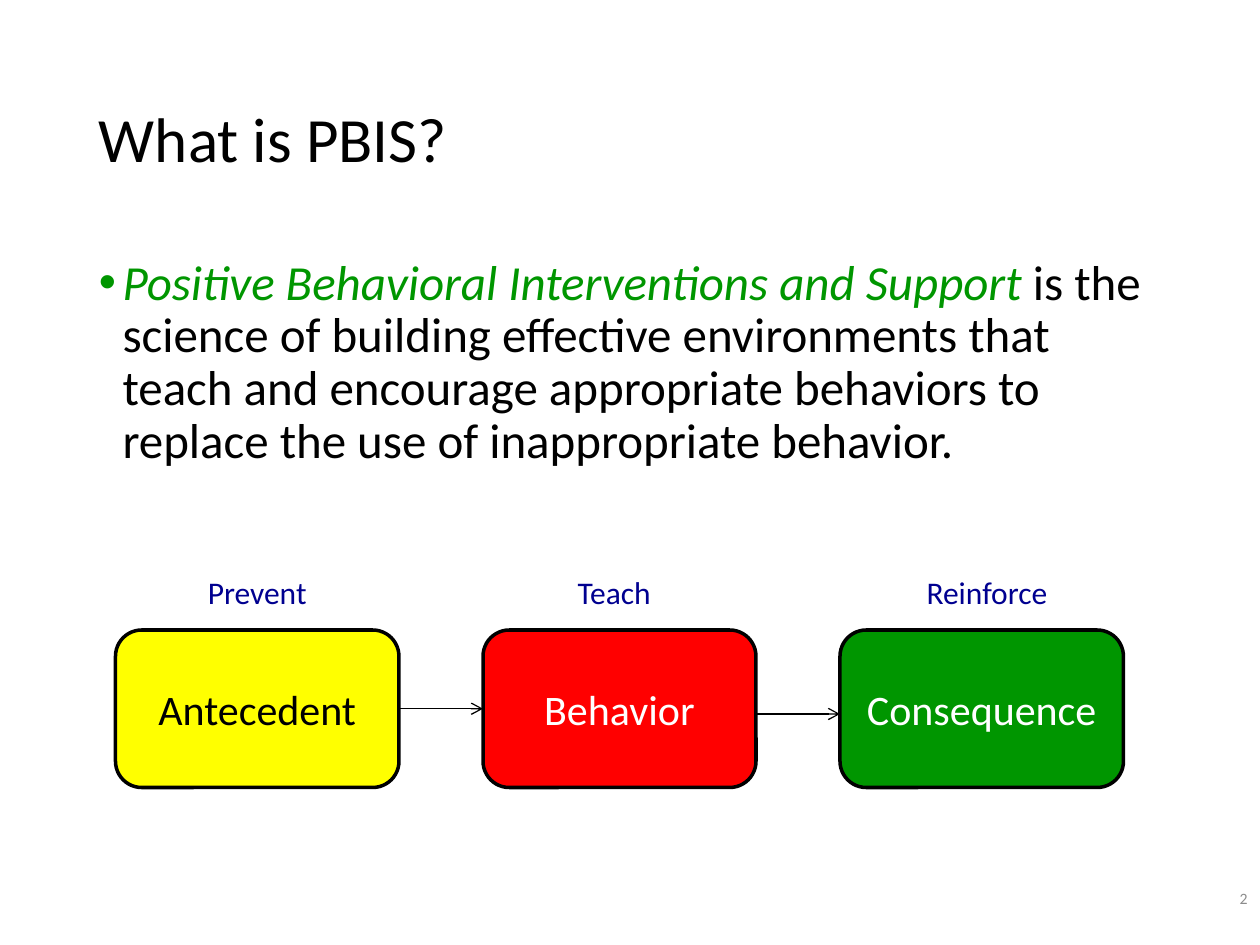
import pptx
import pptx.util
import pptx.dml.color
import pptx.enum.shapes
import pptx.enum.text
from lxml import etree

Pt = pptx.util.Pt
ALIGN = pptx.enum.text.PP_ALIGN
ANCHOR = pptx.enum.text.MSO_ANCHOR

# Content
TITLE = "What is PBIS?"
DEFINITION = [
    ("Positive Behavioral Interventions and Support ", "009600", True),
    ("is the science of building effective environments that teach and "
     "encourage appropriate behaviors to replace the use of inappropriate "
     "behavior.", "000000", False),
]
PAGE_NUMBER = "2"
# Step, fill, text colour, box (left, width), label, label (left, width)
STEPS = [
    ("Antecedent", "FFFF00", "000000", (66, 162), "Prevent", (66, 162)),
    ("Behavior", "FF0000", "FFFFFF", (276, 156), "Teach", (270, 162)),
    ("Consequence", "009600", "FFFFFF", (480, 162), "Reinforce", (480, 168)),
]
ARROW_HEIGHTS = [405, 408]
BOX_TOP, BOX_HEIGHT = 360, 90
LABEL_HEIGHT = 36


def color(value):
    return pptx.dml.color.RGBColor.from_string(value)


def add_element(parent, tag, **attributes):
    return etree.SubElement(parent, pptx.oxml.ns.qn(tag), attributes)


def write(shape, text, size, fill="000000", align=ALIGN.LEFT,
          anchor=ANCHOR.TOP, spacing=None):
    """Fill a shape with a string or a list of (text, colour, italic)."""
    frame = shape.text_frame
    frame.word_wrap = True
    frame.vertical_anchor = anchor
    paragraph = frame.paragraphs[0]
    paragraph.alignment = align
    paragraph.line_spacing = spacing
    pieces = [(text, fill, False)] if isinstance(text, str) else text
    for words, tint, italic in pieces:
        run = paragraph.add_run()
        run.text = words
        run.font.name = "Calibri"
        run.font.size = Pt(size)
        run.font.italic = italic
        run.font.color.rgb = color(tint)
    return paragraph


def add_text(slide, left, top, width, height, text, **form):
    box = slide.shapes.add_textbox(Pt(left), Pt(top), Pt(width), Pt(height))
    return write(box, text, **form)


def add_step(slide, name, fill, text_color, left, width):
    box = slide.shapes.add_shape(
        pptx.enum.shapes.MSO_SHAPE.ROUNDED_RECTANGLE,
        Pt(left), Pt(BOX_TOP), Pt(width), Pt(BOX_HEIGHT))
    box.shadow.inherit = False
    box.fill.solid()
    box.fill.fore_color.rgb = color(fill)
    box.line.color.rgb = color("000000")
    box.line.width = Pt(2)
    write(box, name, size=24, fill=text_color, align=ALIGN.CENTER,
          anchor=ANCHOR.MIDDLE)


def add_arrow(slide, start, end, height):
    arrow = slide.shapes.add_connector(
        pptx.enum.shapes.MSO_CONNECTOR.STRAIGHT,
        Pt(start), Pt(height), Pt(end), Pt(height))
    arrow.line.color.rgb = color("000000")
    arrow.line.width = Pt(0.75)
    add_element(arrow.line._get_or_add_ln(), "a:tailEnd", type="arrow")
    add_element(arrow._element.spPr, "a:effectLst")


def main():
    deck = pptx.Presentation()
    deck.slide_width, deck.slide_height = Pt(720), Pt(540)
    slide = deck.slides.add_slide(deck.slide_layouts[6])

    # Title, definition and page number
    add_text(slide, 49.5, 28.75, 621, 104.4, TITLE, size=36,
             anchor=ANCHOR.MIDDLE, spacing=0.9)
    definition = add_text(slide, 49.5, 143.75, 621, 342.6, DEFINITION,
                          size=28, spacing=0.9)
    definition.space_before = Pt(7.5)
    properties = definition._p.get_or_add_pPr()
    properties.set("marL", str(Pt(13.5)))
    properties.set("indent", str(-Pt(13.5)))
    add_element(properties, "a:buFont", typeface="Arial")
    add_element(properties, "a:buChar", char="•")
    add_text(slide, 570, 498.5, 150, 30, PAGE_NUMBER, size=9, fill="8C8C8C",
             align=ALIGN.RIGHT, anchor=ANCHOR.MIDDLE)

    # Steps with the labels above them
    for name, fill, text_color, box, label, (left, width) in STEPS:
        add_step(slide, name, fill, text_color, *box)
        add_text(slide, left, BOX_TOP - LABEL_HEIGHT, width, LABEL_HEIGHT,
                 label, size=18, fill="000090", align=ALIGN.CENTER)

    # Arrows across the gaps between steps
    boxes = [step[3] for step in STEPS]
    for (left, width), (end, _), height in zip(boxes, boxes[1:], ARROW_HEIGHTS):
        add_arrow(slide, left + width, end, height)

    deck.save("out.pptx")


if __name__ == "__main__":
    main()
